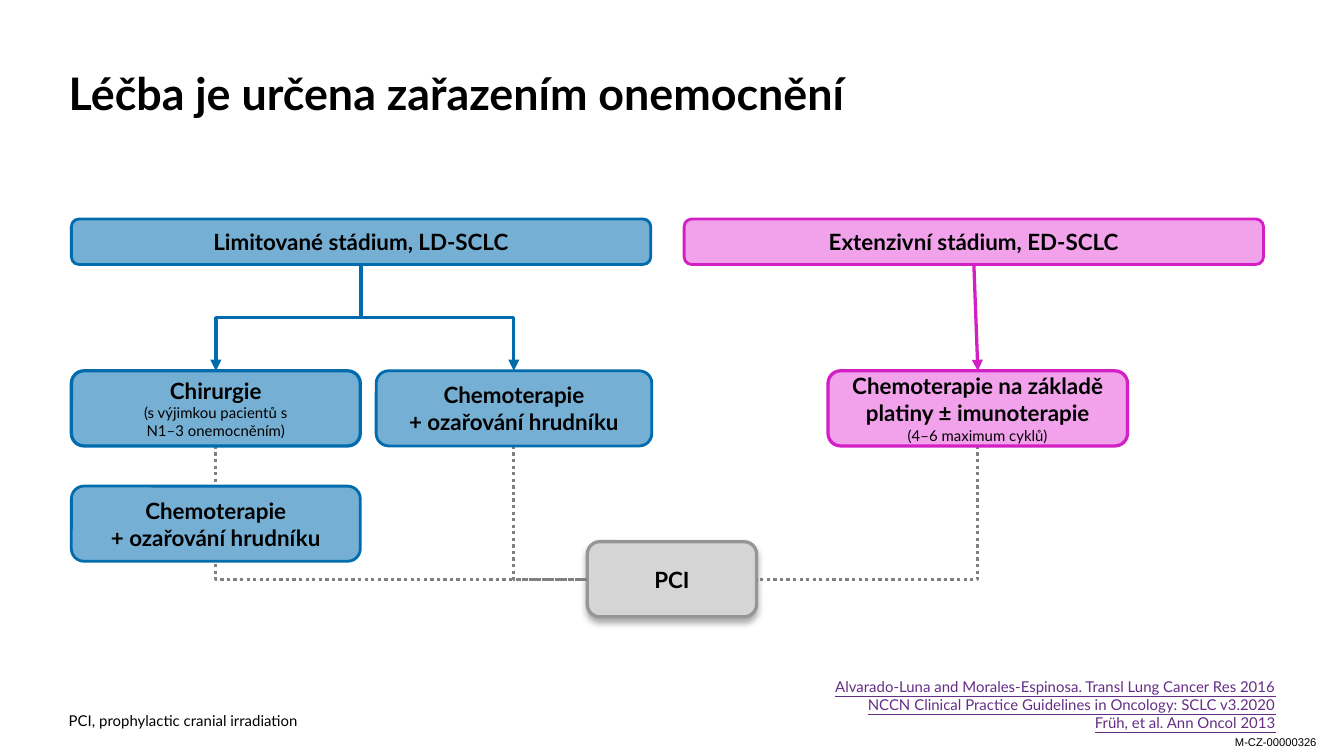
from dataclasses import dataclass

from lxml.etree import SubElement
from pptx import Presentation
from pptx.dml.color import RGBColor
from pptx.enum.dml import MSO_LINE
from pptx.enum.shapes import MSO_CONNECTOR, MSO_SHAPE
from pptx.enum.text import MSO_ANCHOR, PP_ALIGN
from pptx.oxml.ns import qn
from pptx.util import Cm, Pt


@dataclass(frozen=True)
class Theme:
    font: str = "Lato"
    code_font: str = "Arial"
    title: float = 24
    label: float = 12
    small: float = 8
    code: float = 6
    thin: float = 1.5
    thick: float = 1.75
    text: str = "000000"
    reference: str = "642D86"
    dotted: str = "808080"
    # Fill and line of each group of boxes
    limited: tuple = ("75AFD3", "006CAD")
    extensive: tuple = ("F1A2EB", "D220C5")
    prevention: tuple = ("D5D5D5", "969696")


THEME = Theme()
CHEMO_RADIATION = [[("Chemoterapie", True)], [("+ ozařování hrudníku", True)]]


def apply_format(target, values):
    for name, value in values.items():
        setattr(target, name, value)


def add_spans(para, text, values, color):
    """Add text to a paragraph, with a line break at each newline."""
    for index, line in enumerate(text.split("\n")):
        if index:
            para.add_line_break()
        if line:
            span = para.add_run()
            span.text = line
            apply_format(span.font, values)
            span.font.color.rgb = RGBColor.from_string(color)


def add_text(page, place, text, size, margins=(0, 0), frame_format=None,
             align=PP_ALIGN.LEFT, color=THEME.text, **font_format):
    box = page.shapes.add_textbox(*map(Cm, place))
    side, edge = map(Cm, margins)
    apply_format(box.text_frame, {
        "word_wrap": True, "vertical_anchor": MSO_ANCHOR.BOTTOM,
        "margin_left": side, "margin_right": side,
        "margin_top": edge, "margin_bottom": edge, **(frame_format or {})})
    para = box.text_frame.paragraphs[0]
    para.alignment = align
    add_spans(para, text, {"name": THEME.font, "size": Pt(size), **font_format}, color)


def add_box(page, place, colors, weight, paragraphs):
    """Add a rounded box; each paragraph is a list of (text, is label) pairs."""
    box = page.shapes.add_shape(MSO_SHAPE.ROUNDED_RECTANGLE, *map(Cm, place))
    box.shadow.inherit = False
    fill, line = map(RGBColor.from_string, colors)
    box.fill.solid()
    box.fill.fore_color.rgb = fill
    box.line.color.rgb = line
    box.line.width = Pt(weight)
    frame = box.text_frame
    apply_format(frame, {"word_wrap": True, "vertical_anchor": MSO_ANCHOR.MIDDLE})
    for index, spans in enumerate(paragraphs):
        para = frame.add_paragraph() if index else frame.paragraphs[0]
        para.alignment = PP_ALIGN.CENTER
        for text, is_label in spans:
            size = THEME.label if is_label else THEME.small
            add_spans(para, text, {"name": THEME.font, "size": Pt(size),
                                   "bold": is_label}, THEME.text)
    return box


def add_soft_shadow(box):
    effects = box._element.spPr.find(qn("a:effectLst"))
    shadow = SubElement(effects, qn("a:outerShdw"), blurRad=str(Pt(3.5)),
                        dist=str(Pt(2.2)), dir="5400000", rotWithShape="0")
    black = SubElement(shadow, qn("a:srgbClr"), val="000000")
    SubElement(black, qn("a:alpha"), val="32000")


def add_line(page, kind, start, end, color, arrow=False):
    line = page.shapes.add_connector(kind, *map(Cm, (*start, *end)))
    line.line.color.rgb = RGBColor.from_string(color)
    line.line.width = Pt(THEME.thick)
    if arrow:
        SubElement(line.line._get_or_add_ln(), qn("a:tailEnd"), type="triangle")
    SubElement(line._element.spPr, qn("a:effectLst"))
    return line


def add_elbow(page, start, end, color, arrow=False):
    """Add an elbow that leaves its start downwards, by turning a level one."""
    (x1, y1), (x2, y2) = start, end
    middle_x, middle_y = (x1 + x2) / 2, (y1 + y2) / 2
    goes_right = x2 > x1
    half_width = (y1 - y2 if goes_right else y2 - y1) / 2
    half_height = abs(x2 - x1) / 2
    line = add_line(page, MSO_CONNECTOR.ELBOW,
                    (middle_x - half_width, middle_y - half_height),
                    (middle_x + half_width, middle_y + half_height), color, arrow)
    turn = 270 if goes_right else 90
    line._element.spPr.find(qn("a:xfrm")).set("rot", str(turn * 60000))
    return line


def add_dotted_corner(page, start, end):
    line = add_elbow(page, start, end, THEME.dotted)
    line.line.dash_style = MSO_LINE.ROUND_DOT
    line._element.spPr.find(qn("a:prstGeom")).set("prst", "bentConnector2")


def main():
    deck = Presentation()
    deck.slide_width, deck.slide_height = Cm(25.4), Cm(14.29)
    page = deck.slides.add_slide(deck.slide_layouts[6])

    left, header_top, header_width, header_height = 1.35, 4.14, 10.95, 0.86
    header_bottom = header_top + header_height
    extensive_left = 12.93
    top, height = 7.01, 1.42
    bottom = top + height
    surgery_width = 5.46
    surgery_x, chemo_x, platinum_x = left + surgery_width / 2, 9.71, 18.48
    limited_x = left + header_width / 2
    extensive_x = extensive_left + header_width / 2
    pci_left, pci_width, pci_top = 11.1, 3.2, 10.24
    pci_y = pci_top + height / 2

    add_text(page, (23.09, 13.77, 2.08, 0.5), "M-CZ-00000326", THEME.code,
             margins=(0.25, 0.13), name=THEME.code_font,
             frame_format={"word_wrap": False, "vertical_anchor": MSO_ANCHOR.TOP})
    add_text(page, (1.3, 0.53, 23.39, 1.73), "Léčba je určena zařazením onemocnění",
             THEME.title, bold=True)
    add_text(page, (1.3, 12.9, 11.4, 0.89), "PCI, prophylactic cranial irradiation",
             THEME.small)

    pci = add_box(page, (pci_left, pci_top, pci_width, height), THEME.prevention,
                  THEME.thick, [[("PCI", True)]])
    add_soft_shadow(pci)
    for x, pci_side in ((platinum_x, pci_left + pci_width),
                        (chemo_x, pci_left), (surgery_x, pci_left)):
        add_dotted_corner(page, (x, bottom), (pci_side, pci_y))

    for x, colors, text in (
            (left, THEME.limited, "Limitované stádium, LD-SCLC"),
            (extensive_left, THEME.extensive, "Extenzivní stádium, ED-SCLC")):
        add_box(page, (x, header_top, header_width, header_height), colors,
                THEME.thin, [[(text, True)]])

    surgery = [[("Chirurgie\n", True),
                ("(s výjimkou pacientů s\nN1–3 onemocněním)", False)]]
    platinum = [[("Chemoterapie na základě platiny ± imunoterapie\n", True),
                 ("(4–6 maximum cyklů)", False)]]
    for x, y, width, colors, weight, paragraphs in (
            (15.65, top, 5.66, THEME.extensive, THEME.thick, platinum),
            (7.11, top, 5.21, THEME.limited, THEME.thin, CHEMO_RADIATION),
            (left, top, surgery_width, THEME.limited, THEME.thick, surgery),
            (left, 9.19, surgery_width, THEME.limited, THEME.thin, CHEMO_RADIATION)):
        add_box(page, (x, y, width, height), colors, weight, paragraphs)

    add_line(page, MSO_CONNECTOR.STRAIGHT, (extensive_x, header_bottom),
             (platinum_x, top), THEME.extensive[1], arrow=True)
    for x in (chemo_x, surgery_x):
        add_elbow(page, (limited_x, header_bottom), (x, top),
                  THEME.limited[1], arrow=True)

    add_text(page, (10.19, 13.21, 13.92, 0.61),
             "Alvarado-Luna and Morales-Espinosa. Transl Lung Cancer Res 2016\n"
             "NCCN Clinical Practice Guidelines in Oncology: SCLC v3.2020\n"
             "Früh, et al. Ann Oncol 2013",
             THEME.small, align=PP_ALIGN.RIGHT, color=THEME.reference, underline=True)
    deck.save("out.pptx")


if __name__ == "__main__":
    main()
